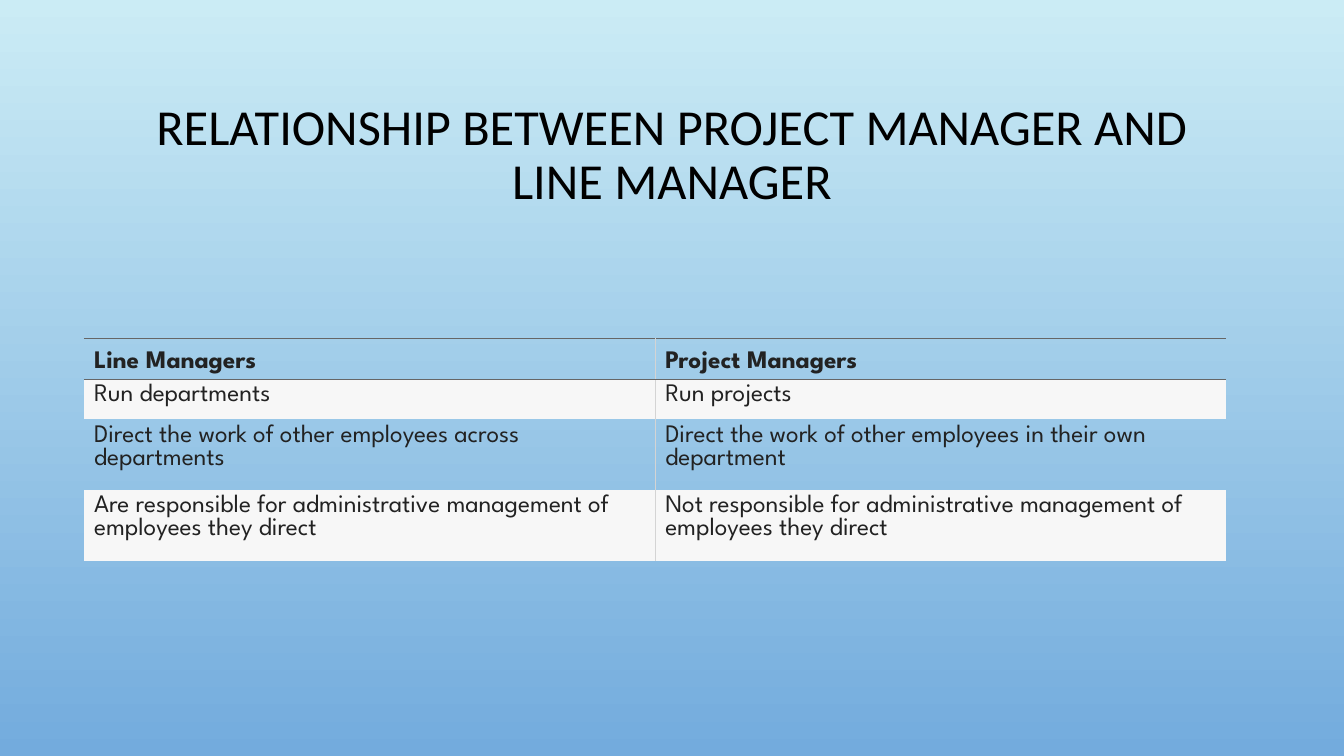
from lxml import etree
from pptx import Presentation
from pptx import util as u
from pptx.dml.color import RGBColor
from pptx.enum import text
from pptx.oxml import ns

SKY_TOP = RGBColor(0xCB, 0xEC, 0xF5)
SKY_BOTTOM = RGBColor(0x73, 0xAB, 0xDD)
BLACK = RGBColor(0, 0, 0)
INK = RGBColor(0x22, 0x22, 0x22)
BAND = RGBColor(0xF7, 0xF7, 0xF7)
RULE = RGBColor(0x66, 0x66, 0x66)
DIVIDER = RGBColor(0xD4, 0xD4, 0xD4)

WIDTH, HEIGHT = u.Inches(13.33), u.Inches(7.5)
RULE_WIDTH = u.Pt(0.6)
ROW_HEIGHTS = [0.34, 0.33, 0.56, 0.56]

TITLE = "RELATIONSHIP BETWEEN PROJECT MANAGER AND LINE MANAGER"
COMPARISON = [
    ("Line Managers", "Project Managers"),
    ("Run departments", "Run projects"),
    ("Direct the work of other employees across departments",
     "Direct the work of other employees in their own department"),
    ("Are responsible for administrative management of employees they direct",
     "Not responsible for administrative management of employees they direct"),
]


def write_text(frame, content, font, size, color, bold=False,
               align=text.PP_ALIGN.LEFT, line_spacing=None):
    frame.word_wrap = True
    paragraph = frame.paragraphs[0]
    paragraph.alignment = align
    paragraph.line_spacing = line_spacing
    run = paragraph.add_run()
    run.text = content
    run.font.name = font
    run.font.size = u.Pt(size)
    run.font.bold = bold
    run.font.color.rgb = color


def set_borders(cell, **colors):
    properties = cell._tc.get_or_add_tcPr()
    for position, side in enumerate("LRTB"):
        line = etree.Element(ns.qn(f"a:ln{side}"), w=str(RULE_WIDTH))
        color = colors.get(side)
        if color is None:
            etree.SubElement(line, ns.qn("a:noFill"))
        else:
            fill = etree.SubElement(line, ns.qn("a:solidFill"))
            etree.SubElement(fill, ns.qn("a:srgbClr"), val=str(color))
        properties.insert(position, line)


def paint_background(slide):
    fill = slide.background.fill
    fill.gradient()
    fill.gradient_angle = 270
    for stop, color in zip(fill.gradient_stops, (SKY_TOP, SKY_BOTTOM)):
        stop.color.rgb = color


def add_title(slide, left, top, width, height):
    box = slide.shapes.add_textbox(left, top, width, height)
    box.text_frame.vertical_anchor = text.MSO_ANCHOR.MIDDLE
    write_text(box.text_frame, TITLE, "Calibri", 36, BLACK,
               align=text.PP_ALIGN.CENTER, line_spacing=0.9)


def add_comparison(slide, left, top, width):
    height = u.Inches(sum(ROW_HEIGHTS))
    table = slide.shapes.add_table(
        len(COMPARISON), 2, left, top, width, height).table
    table.first_row = True
    table.horz_banding = False
    for column in table.columns:
        column.width = width // 2
    for r, (row_height, row) in enumerate(zip(ROW_HEIGHTS, COMPARISON)):
        table.rows[r].height = u.Inches(row_height)
        header = r == 0
        for c, content in enumerate(row):
            cell = table.cell(r, c)
            if r % 2:
                cell.fill.solid()
                cell.fill.fore_color.rgb = BAND
            else:
                cell.fill.background()
            cell.vertical_anchor = (
                text.MSO_ANCHOR.BOTTOM if header else text.MSO_ANCHOR.TOP)
            set_borders(cell,
                        L=DIVIDER if c else None,
                        R=None if c else DIVIDER,
                        T=RULE if r < 2 else None,
                        B=RULE if header else None)
            write_text(cell.text_frame, content, "League Spartan", 18, INK,
                       bold=header)


def main():
    presentation = Presentation()
    presentation.slide_width, presentation.slide_height = WIDTH, HEIGHT
    slide = presentation.slides.add_slide(presentation.slide_layouts[6])
    paint_background(slide)
    content_width = int(WIDTH * 0.85)
    add_title(slide, int(WIDTH * 0.075), int(HEIGHT * 0.09),
              content_width, int(HEIGHT * 0.233))
    add_comparison(slide, WIDTH // 16, int(HEIGHT * 0.448), content_width)
    presentation.save("out.pptx")


if __name__ == "__main__":
    main()
